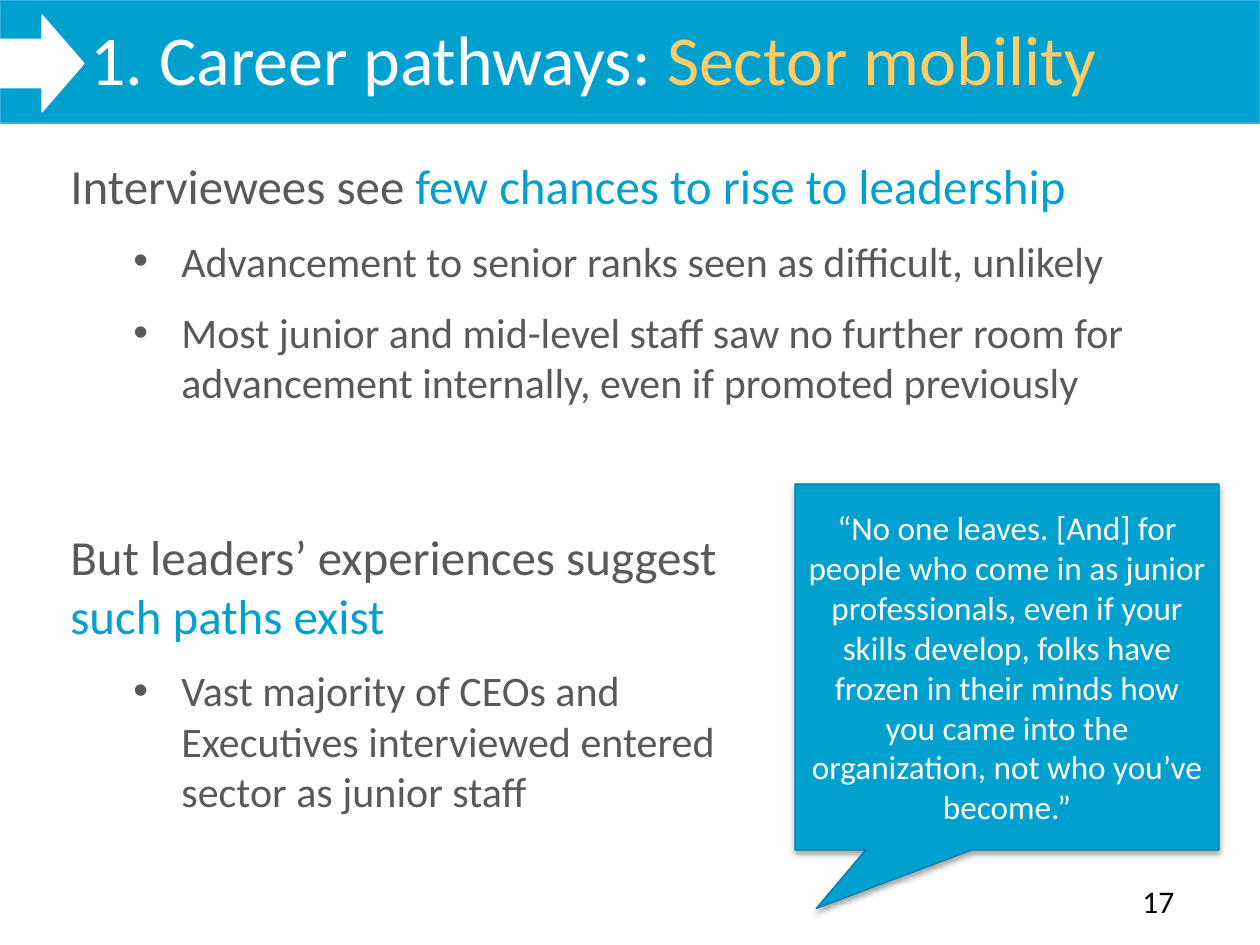
"""Builds the sector mobility slide with its headline, findings and quotation."""
from lxml.etree import SubElement
from pptx import Presentation
from pptx.dml.color import RGBColor
from pptx.enum.shapes import MSO_SHAPE
from pptx.enum.text import MSO_ANCHOR, PP_ALIGN
from pptx.oxml.ns import qn
from pptx.util import Emu, Pt

BLUE = RGBColor(0x00, 0xA0, 0xCF)
LIGHT_BLUE = RGBColor(0x32, 0xB2, 0xDD)
DARK_BLUE = RGBColor(0x00, 0x7C, 0xAE)
GOLD = RGBColor(0xFF, 0xCC, 0x66)
GRAY = RGBColor(0x59, 0x59, 0x59)
WHITE = RGBColor(0xFF, 0xFF, 0xFF)
BLACK = RGBColor(0x00, 0x00, 0x00)
FONT = "Calibri"
PX_PER_INCH = 126

TITLE = [("1. Career pathways: ", WHITE), ("Sector mobility", GOLD)]
PAGE_NUMBER = "17"
FINDINGS = [
    {
        "box": (58, 149, 1140, 369),
        "heading": [("Interviewees see ", GRAY), ("few chances to rise to leadership", BLUE)],
        "points": [
            "Advancement to senior ranks seen as difficult, unlikely",
            "Most junior and mid-level staff saw no further room for "
            "advancement internally, even if promoted previously",
        ],
    },
    {
        "box": (58, 520, 696, 305),
        "heading": [("But leaders’ experiences suggest ", GRAY), ("such paths exist", BLUE)],
        "points": ["Vast majority of CEOs and Executives interviewed entered sector as junior staff"],
    },
]
QUOTE = (
    "“No one leaves. [And] for people who come in as junior professionals, "
    "even if your skills develop, folks have frozen in their minds how you "
    "came into the organization, not who you’ve become.”"
)


def px(length):
    return Emu(round(length * 914400 / PX_PER_INCH))


def place(*box):
    return [px(length) for length in box]


def add_runs(paragraph, runs, size):
    for text, color in runs:
        run = paragraph.add_run()
        run.text = text
        run.font.name = FONT
        run.font.size = Pt(size)
        run.font.color.rgb = color


def indent(paragraph, margin, first_line=0):
    properties = paragraph._p.get_or_add_pPr()
    properties.set("marL", str(px(margin)))
    properties.set("indent", str(px(first_line)))
    return properties


def add_bullet(paragraph):
    properties = indent(paragraph, 111, -48)
    SubElement(properties, qn("a:buFont"), typeface="Arial")
    SubElement(properties, qn("a:buChar"), char="•")


def add_filled_shape(slide, kind, box, fill, line):
    shape = slide.shapes.add_shape(kind, *place(*box))
    shape.shadow.inherit = False
    shape.fill.solid()
    shape.fill.fore_color.rgb = fill
    shape.line.color.rgb = line
    shape.line.width = Pt(0.75)
    return shape


def add_text_box(slide, box):
    frame = slide.shapes.add_textbox(*place(*box)).text_frame
    frame.word_wrap = True
    return frame


def add_title(slide):
    title = slide.shapes.title
    title.left, title.top, title.width, title.height = place(0, 9, 1260, 157)
    slide.shapes[-1].element.addnext(title.element)
    frame = title.text_frame
    frame.vertical_anchor = MSO_ANCHOR.TOP
    paragraph = frame.paragraphs[0]
    paragraph.alignment = PP_ALIGN.LEFT
    indent(paragraph, 78)
    add_runs(paragraph, TITLE, 40)


def add_finding(slide, finding):
    frame = add_text_box(slide, finding["box"])
    heading = frame.paragraphs[0]
    heading.space_after = Pt(12)
    add_runs(heading, finding["heading"], 28)
    for point in finding["points"]:
        paragraph = frame.add_paragraph()
        paragraph.level = 1
        paragraph.space_after = Pt(12)
        add_bullet(paragraph)
        add_runs(paragraph, [(point, GRAY)], 24)


def add_quote(slide):
    callout = add_filled_shape(
        slide, MSO_SHAPE.RECTANGULAR_CALLOUT, (795, 484, 424, 366), BLUE, DARK_BLUE)
    callout.adjustments[0] = -0.45
    callout.adjustments[1] = 0.66
    effects = callout.element.spPr.find(qn("a:effectLst"))
    shadow = SubElement(
        effects, qn("a:outerShdw"), blurRad=str(Pt(3.1)), dist=str(Pt(1.8)),
        dir="5400000", rotWithShape="0")
    color = SubElement(shadow, qn("a:srgbClr"), val=str(BLACK))
    SubElement(color, qn("a:alpha"), val="35000")
    frame = callout.text_frame
    frame.word_wrap = True
    frame.vertical_anchor = MSO_ANCHOR.MIDDLE
    paragraph = frame.paragraphs[0]
    paragraph.alignment = PP_ALIGN.CENTER
    add_runs(paragraph, [(QUOTE, WHITE)], 19)


def main():
    presentation = Presentation()
    presentation.slide_width, presentation.slide_height = place(1260, 945)
    slide = presentation.slides.add_slide(presentation.slide_layouts[5])
    add_filled_shape(slide, MSO_SHAPE.RECTANGLE, (0, 0, 1260, 123), BLUE, LIGHT_BLUE)
    add_filled_shape(slide, MSO_SHAPE.RIGHT_ARROW, (0, 15, 84, 97), WHITE, WHITE)
    add_title(slide)
    page_number = add_text_box(slide, (1130, 876, 67, 50))
    add_runs(page_number.paragraphs[0], [(PAGE_NUMBER, BLACK)], 18)
    for finding in FINDINGS:
        add_finding(slide, finding)
    add_quote(slide)
    presentation.save("out.pptx")


if __name__ == "__main__":
    main()
